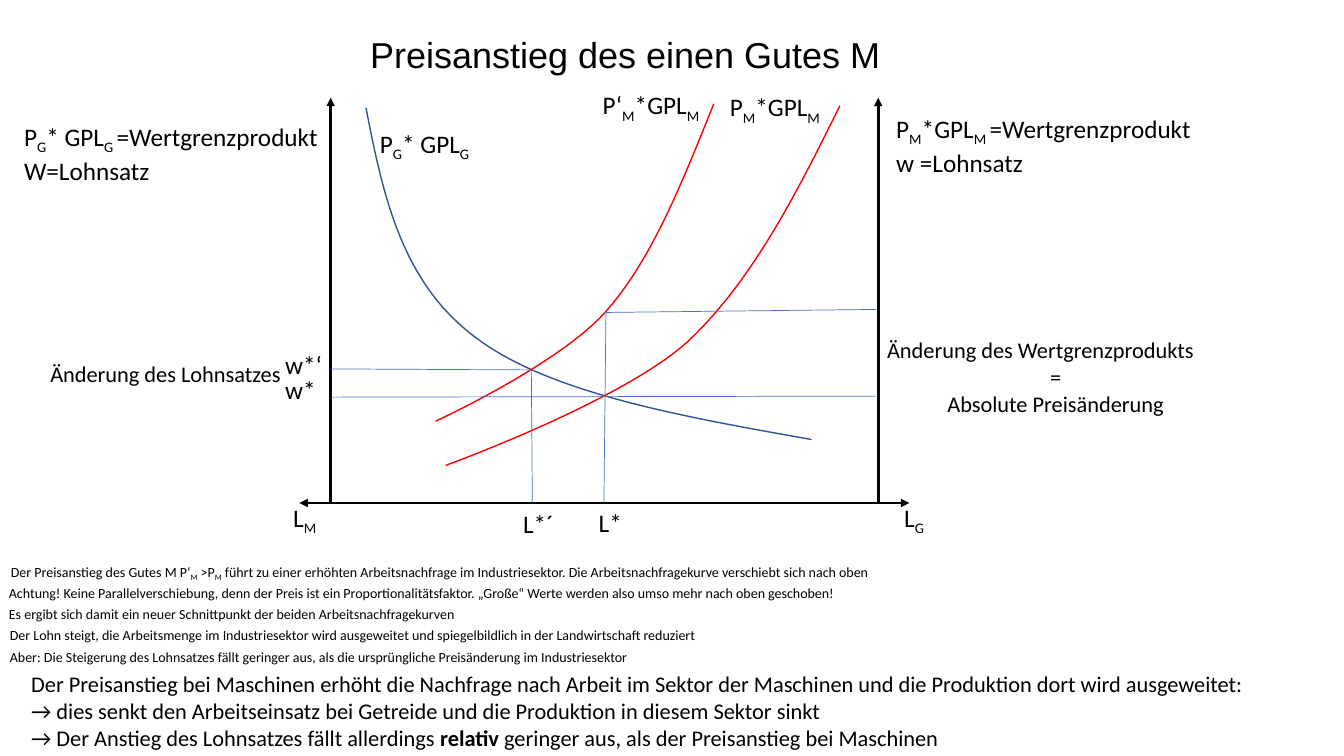
from pptx import Presentation
from pptx.dml.color import RGBColor
from pptx.enum.text import MSO_ANCHOR, MSO_AUTO_SIZE, PP_ALIGN
from pptx.oxml.ns import qn
from pptx.util import Inches, Pt
from lxml import etree

BLACK = RGBColor(0x00, 0x00, 0x00)
NAVY = RGBColor(0x32, 0x54, 0x91)
BLUE = RGBColor(0x44, 0x72, 0xC4)
RED = RGBColor(0xFF, 0x00, 0x00)

# Axis frame
LEFT, RIGHT, BASE, TOP = 3.28, 8.71, 4.99, 0.97

# Left edge and text of each note
NOTES = [
    (0.01, "Der Preisanstieg des Gutes M P‘_M_ >P_M_ führt zu einer erhöhten Arbeitsnachfrage "
     "im Industriesektor. Die Arbeitsnachfragekurve verschiebt sich nach oben"),
    (-0.01, "Achtung! Keine Parallelverschiebung, denn der Preis ist ein Proportionalitätsfaktor. "
     "„Große“ Werte werden also umso mehr nach oben geschoben!"),
    (-0.01, "Es ergibt sich damit ein neuer Schnittpunkt der beiden Arbeitsnachfragekurven"),
    (0, "Der Lohn steigt, die Arbeitsmenge im Industriesektor wird ausgeweitet und "
     "spiegelbildlich in der Landwirtschaft reduziert"),
    (0, "Aber: Die Steigerung des Lohnsatzes fällt geringer aus, als die ursprüngliche "
     "Preisänderung im Industriesektor"),
]

RESULT = [
    "Der Preisanstieg bei Maschinen erhöht die Nachfrage nach Arbeit im Sektor der "
    "Maschinen und die Produktion dort wird ausgeweitet:",
    "→ dies senkt den Arbeitseinsatz bei Getreide und die Produktion in diesem Sektor sinkt",
    "→ Der Anstieg des Lohnsatzes fällt allerdings ~relativ~ geringer aus, "
    "als der Preisanstieg bei Maschinen",
]


def place(shape, left, top, width, height):
    shape.left, shape.top = Inches(left), Inches(top)
    shape.width, shape.height = Inches(width), Inches(height)


def style(run, size, face="Calibri"):
    run.font.size = Pt(size)
    run.font.name = face
    run.font.color.rgb = BLACK


def write(para, text, size):
    """Fill a paragraph; _x_ marks a subscript, ~x~ marks bold."""
    for i, part in enumerate(text.split("_")):
        for j, piece in enumerate(part.split("~")):
            if not piece:
                continue
            run = para.add_run()
            run.text = piece
            style(run, size)
            if j % 2:
                run.font.bold = True
            if i % 2:
                run.font._element.set("baseline", "-25000")


def fill(frame, lines, size):
    for i, text in enumerate(lines):
        para = frame.add_paragraph() if i else frame.paragraphs[0]
        write(para, text, size)


def add_label(slide, box, lines, size=18, wrap=False):
    shape = slide.shapes.add_textbox(*map(Inches, box))
    frame = shape.text_frame
    frame.word_wrap = wrap
    frame.auto_size = MSO_AUTO_SIZE.SHAPE_TO_FIT_TEXT
    fill(frame, lines, size)
    return frame


def add_line(slide, ends, color=BLUE, width=0.5, arrow=False):
    line = slide.shapes.add_connector(1, *map(Inches, ends))
    line.line.color.rgb = color
    line.line.width = Pt(width)
    props = line.element.spPr
    if arrow:
        etree.SubElement(props.find(qn("a:ln")), qn("a:tailEnd"), type="triangle")
    etree.SubElement(props, qn("a:effectLst"))


def bend(curve):
    """Turn the first six straight segments into two cubic ones."""
    steps = list(curve.element.iter(qn("a:lnTo")))
    for i in (0, 3):
        cubic = etree.Element(qn("a:cubicBezTo"))
        steps[i].addprevious(cubic)
        for step in steps[i:i + 3]:
            cubic.append(step[0])
            step.getparent().remove(step)


def add_curve(slide, knots, color):
    points = [tuple(map(Inches, knot)) for knot in knots]
    outline = slide.shapes.build_freeform(*points[0])
    outline.add_line_segments(points[1:], close=False)
    curve = outline.convert_to_shape()
    bend(curve)
    curve.fill.background()
    curve.line.color.rgb = color
    curve.line.width = Pt(1)
    curve.shadow.inherit = False


def set_title(slide):
    title = slide.shapes.title
    place(title, 2.12, 0.27, 8.16, 0.7)
    frame = title.text_frame
    frame.text = "Preisanstieg des einen Gutes M"
    frame.auto_size = MSO_AUTO_SIZE.NONE
    frame.vertical_anchor = MSO_ANCHOR.TOP
    frame.margin_top = Inches(0.05)
    frame.paragraphs[0].alignment = PP_ALIGN.CENTER
    style(frame.paragraphs[0].runs[0], 25.7, "Arial")


def set_body(slide):
    body = slide.placeholders[1]
    place(body, 0.21, 6.6, 12.73, 0.91)
    frame = body.text_frame
    frame.auto_size = MSO_AUTO_SIZE.NONE
    fill(frame, RESULT, 16)
    for para in frame.paragraphs:
        para.space_before = Pt(0)
        props = para._p.get_or_add_pPr()
        props.set("marL", "0")
        props.set("indent", "0")
        etree.SubElement(props, qn("a:buNone"))


def add_axes(slide):
    for x in (LEFT, RIGHT):
        add_line(slide, (x, BASE, x, TOP), BLACK, 2, True)
    for start, end in ((LEFT, 9.02), (4.16, 2.97)):
        add_line(slide, (start, BASE, end, BASE), BLACK, 2, True)


def add_curves(slide):
    add_curve(slide, [(3.63, 1.07), (3.8, 1.94), (3.98, 2.8), (4.72, 3.35),
                      (5.45, 3.9), (6.75, 4.13), (8.05, 4.36)], NAVY)
    add_curve(slide, [(8.33, 1.05), (7.9, 1.92), (7.46, 2.79), (6.82, 3.39),
                      (6.17, 3.98), (4.44, 4.61), (4.44, 4.61), (4.42, 4.62)], RED)
    add_curve(slide, [(7.08, 1.03), (6.77, 1.8), (6.47, 2.57), (6.01, 3.09),
                      (5.55, 3.61), (4.34, 4.17), (4.34, 4.17), (4.32, 4.18)], RED)


def add_guides(slide):
    for ends in ((RIGHT, 3.93, LEFT, 3.94), (5.25, 3.67, LEFT, 3.66),
                 (5.99, BASE, 6.01, 3.09), (8.69, 3.07, 5.99, 3.1),
                 (5.28, BASE, 5.27, 3.66)):
        add_line(slide, ends)


def add_labels(slide):
    # Axis titles
    add_label(slide, (0.14, 1.15, 3.22, 0.71),
              ["P_G_* GPL_G _=Wertgrenzprodukt", "W=Lohnsatz"], wrap=True)
    add_label(slide, (8.79, 1.07, 3.72, 0.71),
              ["P_M_*GPL_M _=Wertgrenzprodukt", "w =Lohnsatz"], wrap=True)
    # Curve, wage and labour marks
    for left, top, width, text in (
            (3.67, 1.22, 1.12, "P_G_* GPL_G_"), (7.14, 0.86, 1.14, "P_M_*GPL_M_"),
            (5.88, 0.84, 1.2, "P‘_M_*GPL_M_"), (2.73, 3.66, 0.51, "w*"),
            (2.73, 3.42, 0.57, "w*‘"), (5.84, 4.98, 0.44, "L*"),
            (5.09, 4.99, 0.51, "L*´")):
        add_label(slide, (left, top, width, 0.4), [text])
    for left, text in ((8.87, "L_G_"), (2.81, "L_M_")):
        add_label(slide, (left, 4.93, 0.63, 0.4), [text], wrap=True)
    # Changes
    add_label(slide, (0.4, 3.52, 2.69, 0.38), ["Änderung des Lohnsatzes"], 16, True)
    frame = add_label(slide, (8.7, 3.29, 3.54, 0.91),
                      ["Änderung des Wertgrenzprodukts", "=", "Absolute Preisänderung"],
                      16, True)
    for para in frame.paragraphs[1:]:
        para.alignment = PP_ALIGN.CENTER


def add_notes(slide):
    for row, (left, text) in enumerate(NOTES):
        add_label(slide, (left, 5.54 + 0.21 * row, 13.32, 0.32), [text], 10, True)


def main():
    deck = Presentation()
    deck.slide_width, deck.slide_height = Inches(13.33), Inches(7.5)
    slide = deck.slides.add_slide(deck.slide_layouts[1])
    set_title(slide)
    set_body(slide)
    add_axes(slide)
    add_curves(slide)
    add_guides(slide)
    add_labels(slide)
    add_notes(slide)
    deck.save("out.pptx")


if __name__ == "__main__":
    main()
